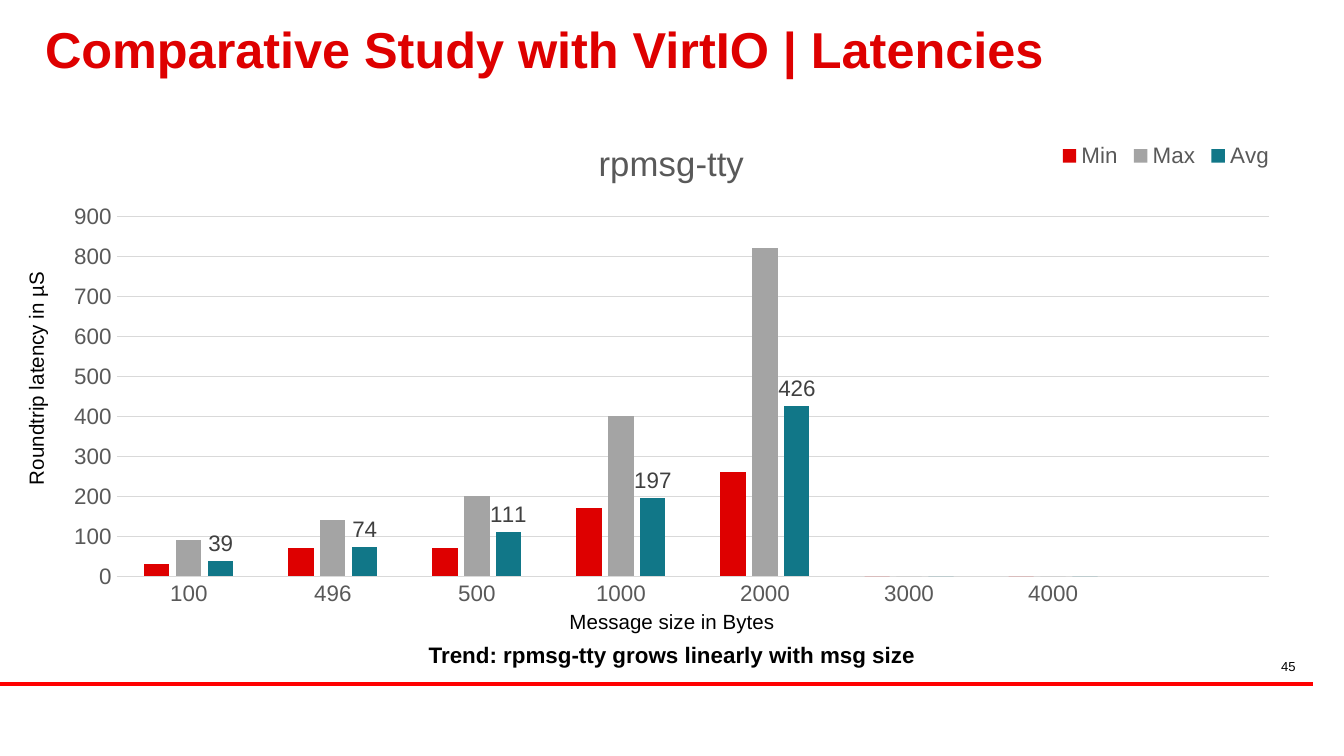
from dataclasses import dataclass

from lxml.etree import Element, SubElement
from pptx import Presentation
from pptx.chart.data import CategoryChartData
from pptx.dml.color import RGBColor
from pptx.enum.chart import XL_CHART_TYPE, XL_LABEL_POSITION, XL_LEGEND_POSITION, XL_TICK_MARK
from pptx.enum.shapes import MSO_CONNECTOR
from pptx.enum.text import MSO_ANCHOR, PP_ALIGN
from pptx.oxml.ns import qn
from pptx.util import Inches, Pt


@dataclass(frozen=True)
class Theme:
    font: str = "Arial"
    accent: str = "DE0000"
    rule: str = "FF0000"
    ink: str = "000000"
    muted: str = "595959"
    label: str = "404040"
    grid: str = "D9D9D9"
    series: tuple = ("DE0000", "A4A4A4", "117788")
    title_size: float = 27
    chart_title_size: float = 18.6
    chart_size: float = 12
    caption_size: float = 11
    number_size: float = 7


THEME = Theme()
WIDTH = Inches(10)
HEIGHT = WIDTH * 9 // 16
COLUMNS = 100
CELL = WIDTH // COLUMNS

SIZES = ("100", "496", "500", "1000", "2000", "3000", "4000", "")
LATENCIES = {
    "Min": (30, 70, 70, 170, 260, 0, 0, None),
    "Max": (90, 140, 200, 400, 820, 0, 0, None),
    "Avg": (39, 74, 111, 197, 426, 0, 0, None),
}


def grid_box(*cells):
    """Turn column, row, columns and rows into left, top, width and height."""
    return tuple(round(CELL * cell) for cell in cells)


def style_font(font, size, color=THEME.ink, bold=False):
    font.name, font.size, font.bold = THEME.font, Pt(size), bold
    font.color.rgb = RGBColor.from_string(color)


def write_text(frame, text, *, size, color=THEME.ink, bold=False,
               align=PP_ALIGN.CENTER, anchor=MSO_ANCHOR.TOP, spacing=None,
               margins=(0.1, 0.05)):
    frame.word_wrap = True
    frame.vertical_anchor = anchor
    frame.margin_left = frame.margin_right = Inches(margins[0])
    frame.margin_top = frame.margin_bottom = Inches(margins[1])
    paragraph = frame.paragraphs[0]
    paragraph.alignment, paragraph.line_spacing = align, spacing
    run = paragraph.add_run()
    run.text = text
    style_font(run.font, size, color, bold)


def add_caption(slide, box, text, *, rotation=0, **text_format):
    caption = slide.shapes.add_textbox(*box)
    caption.rotation = rotation
    write_text(caption.text_frame, text, **text_format)


def add_title(slide, box, text):
    title = slide.shapes.title
    title.left, title.top, title.width, title.height = box
    write_text(title.text_frame, text, size=THEME.title_size, color=THEME.accent,
               bold=True, align=PP_ALIGN.LEFT, anchor=MSO_ANCHOR.MIDDLE,
               spacing=0.85, margins=(0.08, 0.04))


def place_part(part, after=None, **percents):
    """Place a chart part by percentages of the chart's size."""
    for old_layout in part.findall(qn("c:layout")):
        part.remove(old_layout)
    layout = Element(qn("c:layout"))
    manual = SubElement(layout, qn("c:manualLayout"))
    if after is None:
        SubElement(manual, qn("c:layoutTarget")).set("val", "inner")
        part.insert(0, layout)
    else:
        part.find(qn(after)).addnext(layout)
    for side in ("x", "y"):
        SubElement(manual, qn(f"c:{side}Mode")).set("val", "edge")
    for side, percent in percents.items():
        SubElement(manual, qn(f"c:{side}")).set("val", str(percent / 100))


def style_axes(chart):
    for axis in (chart.category_axis, chart.value_axis):
        axis.major_tick_mark = axis.minor_tick_mark = XL_TICK_MARK.NONE
        style_font(axis.tick_labels.font, THEME.chart_size, THEME.muted)
    latency = chart.value_axis
    latency.minimum_scale, latency.maximum_scale, latency.major_unit = 0, 900, 100
    latency.has_major_gridlines = True
    latency.format.line.fill.background()
    for line in (latency.major_gridlines.format.line, chart.category_axis.format.line):
        line.color.rgb, line.width = RGBColor.from_string(THEME.grid), Pt(0.75)


def style_bars(plot):
    plot.gap_width, plot.overlap, plot.vary_by_categories = 219, -27, False
    for bars, color in zip(plot.series, THEME.series):
        bars.format.fill.solid()
        bars.format.fill.fore_color.rgb = RGBColor.from_string(color)
        bars.invert_if_negative = False
    # Averages carry values; the format leaves zeros blank
    labels = plot.series[-1].data_labels
    labels.show_value, labels.position = True, XL_LABEL_POSITION.OUTSIDE_END
    labels.number_format, labels.number_format_is_linked = "0;;", False
    style_font(labels.font, THEME.chart_size, THEME.label)


def add_latency_chart(slide, box, heading):
    data = CategoryChartData()
    data.categories = SIZES
    for name, values in LATENCIES.items():
        data.add_series(name, values)
    chart = slide.shapes.add_chart(XL_CHART_TYPE.COLUMN_CLUSTERED, *box, data).chart
    style_font(chart.font, 10)
    style_axes(chart)
    style_bars(chart.plots[0])

    # Heading
    chart.has_title = True
    heading_run = chart.chart_title.text_frame.paragraphs[0].add_run()
    heading_run.text = heading
    style_font(heading_run.font, THEME.chart_title_size, THEME.muted)
    place_part(chart.chart_title._element, after="c:tx", x=43.7, y=3.4)

    # Legend at the top right
    chart.has_legend = True
    legend = chart.legend
    legend.position, legend.include_in_layout = XL_LEGEND_POSITION.BOTTOM, False
    style_font(legend.font, THEME.chart_size, THEME.muted)
    place_part(legend._element, after="c:legendPos", x=80.8, y=3.4, w=18, h=8)

    # Plot area
    place_part(chart._chartSpace.chart.plotArea, x=5.5, y=18.5, w=92.6, h=66)


def add_footer(slide, rule_box, number_box, number):
    left, top, width, height = rule_box
    rule = slide.shapes.add_connector(MSO_CONNECTOR.STRAIGHT, left, top, left + width, top + height)
    rule.line.color.rgb, rule.line.width = RGBColor.from_string(THEME.rule), Pt(2.25)
    SubElement(rule._element.spPr, qn("a:effectLst"))
    add_caption(slide, number_box, number, size=THEME.number_size,
                align=PP_ALIGN.RIGHT, margins=(0.08, 0.04))


def build_chart_slide(presentation):
    slide = presentation.slides.add_slide(presentation.slide_layouts[5])
    add_title(slide, grid_box(2.55, 0.6, 92.5, 6.7), "Comparative Study with VirtIO | Latencies")
    add_latency_chart(slide, grid_box(3.6, 8.6, 92.6, 40.6), "rpmsg-tty")
    add_footer(slide, grid_box(0, 50.9, 97.7, 0), grid_box(73.9, 48.6, 23.3, 1.7), "45")
    # Axis captions and conclusion
    add_caption(slide, grid_box(36.1, 44.8, 27.8, 2.9), "Message size in Bytes",
                size=THEME.caption_size)
    add_caption(slide, grid_box(-11.2, 26.7, 27.8, 2.9), "Roundtrip latency in µS",
                size=THEME.caption_size, rotation=270)
    add_caption(slide, grid_box(5.9, 47.2, 88.2, 3), "Trend: rpmsg-tty grows linearly with msg size",
                size=THEME.chart_size, bold=True)


def main():
    presentation = Presentation()
    presentation.slide_width, presentation.slide_height = WIDTH, HEIGHT
    build_chart_slide(presentation)
    presentation.save("out.pptx")


if __name__ == "__main__":
    main()
